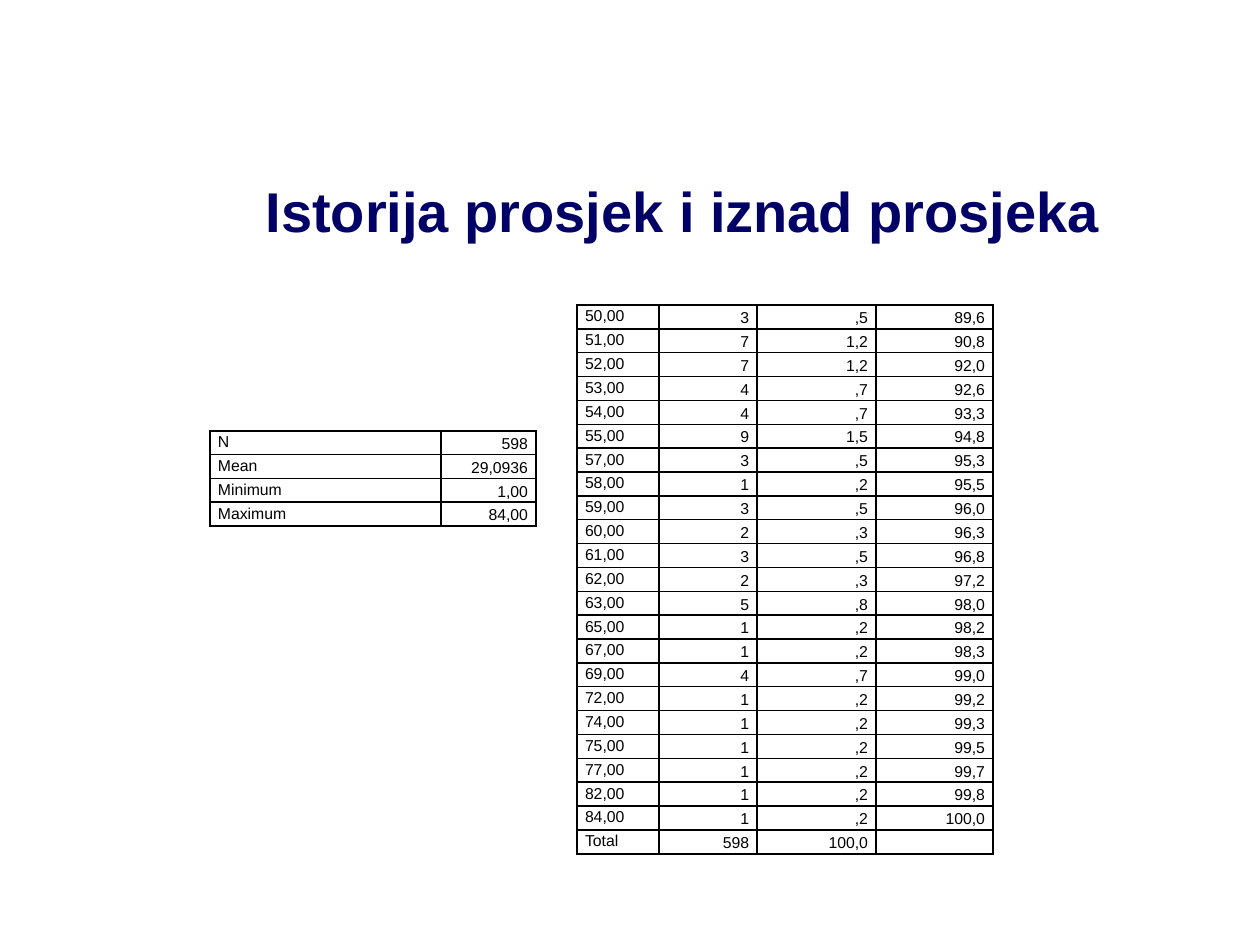
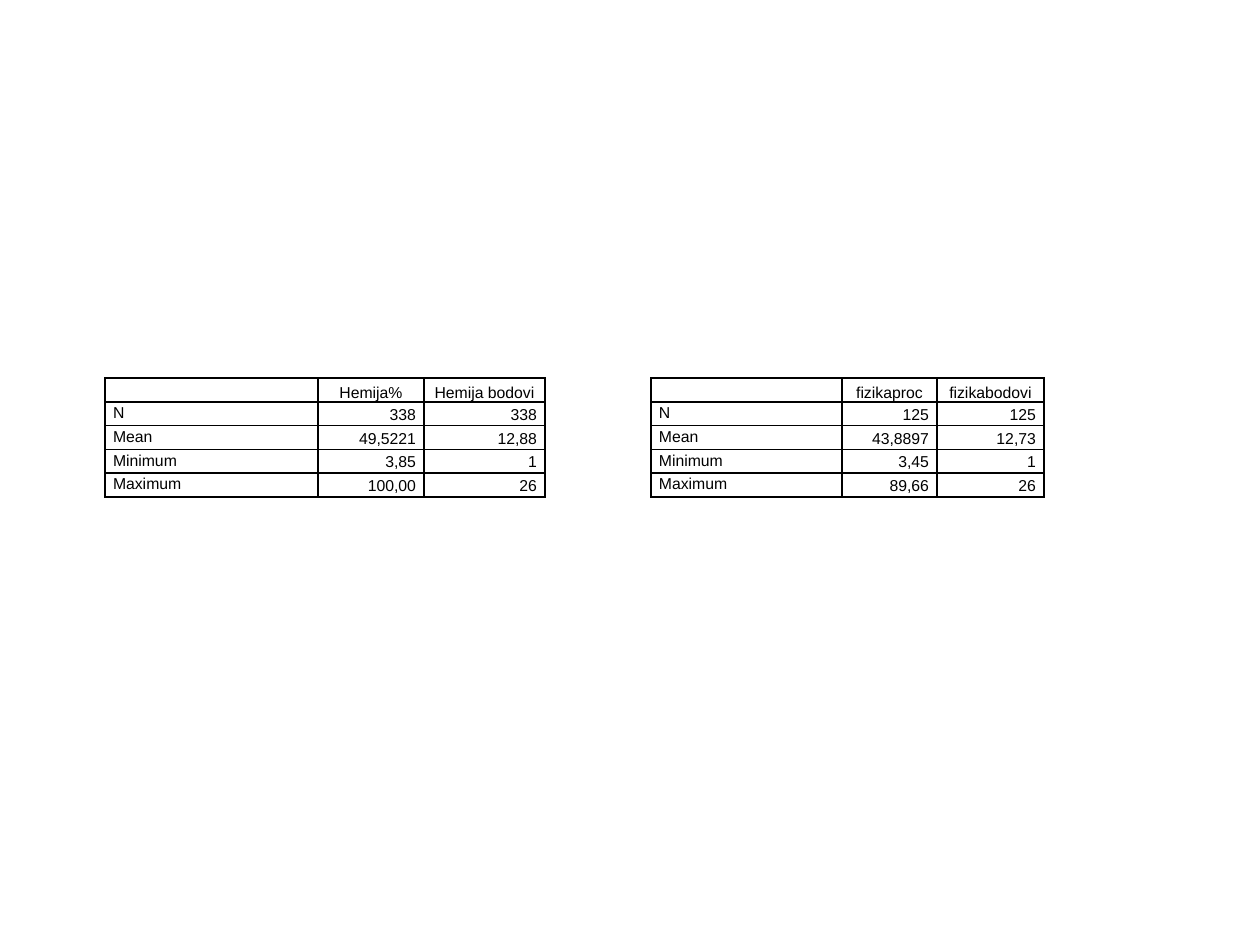
from dataclasses import dataclass

from lxml import etree
from pptx import Presentation
from pptx import util as u
from pptx.dml.color import RGBColor
from pptx.enum import text
from pptx.oxml.ns import qn

TITLE = "Istorija prosjek i iznad prosjeka"
TITLE_BOX = (253, 155, 944, 110)

FREQUENCIES = [
    ("50,00", "3", ",5", "89,6"),
    ("51,00", "7", "1,2", "90,8"),
    ("52,00", "7", "1,2", "92,0"),
    ("53,00", "4", ",7", "92,6"),
    ("54,00", "4", ",7", "93,3"),
    ("55,00", "9", "1,5", "94,8"),
    ("57,00", "3", ",5", "95,3"),
    ("58,00", "1", ",2", "95,5"),
    ("59,00", "3", ",5", "96,0"),
    ("60,00", "2", ",3", "96,3"),
    ("61,00", "3", ",5", "96,8"),
    ("62,00", "2", ",3", "97,2"),
    ("63,00", "5", ",8", "98,0"),
    ("65,00", "1", ",2", "98,2"),
    ("67,00", "1", ",2", "98,3"),
    ("69,00", "4", ",7", "99,0"),
    ("72,00", "1", ",2", "99,2"),
    ("74,00", "1", ",2", "99,3"),
    ("75,00", "1", ",2", "99,5"),
    ("77,00", "1", ",2", "99,7"),
    ("82,00", "1", ",2", "99,8"),
    ("84,00", "1", ",2", "100,0"),
    ("Total", "598", "100,0", ""),
]
STATISTICS = ("N", "Mean", "Minimum", "Maximum")
HISTORY = [("598",), ("29,0936",), ("1,00",), ("84,00",)]
PHYSICS = [("125", "125"), ("43,8897", "12,73"), ("3,45", "1"), ("89,66", "26")]
CHEMISTRY = [("338", "338"), ("49,5221", "12,88"), ("3,85", "1"), ("100,00", "26")]


@dataclass(frozen=True)
class Theme:
    font: str = "Arial"
    title_color: RGBColor = RGBColor.from_string("000066")
    text_color: RGBColor = RGBColor.from_string("000000")
    cell_color: RGBColor = RGBColor.from_string("FFFFFF")
    title_size: int = 32
    cell_size: int = 9
    line_spacing: float = 1.15
    border_width: int = 1


THEME = Theme()
SLIDE_SIZE = (1260, 945)
CELL_MARGIN = 8


def px(length):
    return u.Emu(round(length * u.Inches(1) / 126))


def add_run(paragraph, words, size, color, bold=False):
    run = paragraph.add_run()
    run.text = words
    run.font.name = THEME.font
    run.font.size = u.Pt(size)
    run.font.color.rgb = color
    run.font.bold = bold


def add_title(slide):
    title = slide.shapes.title
    title.left, title.top, title.width, title.height = map(px, TITLE_BOX)
    title.text_frame.vertical_anchor = text.MSO_ANCHOR.MIDDLE
    paragraph = title.text_frame.paragraphs[0]
    paragraph.alignment = text.PP_ALIGN.LEFT
    add_run(paragraph, TITLE, THEME.title_size, THEME.title_color, bold=True)


def add_borders(cell, open_sides):
    """Rule all four sides of a cell except the open ones."""
    properties = cell._tc.get_or_add_tcPr()
    for side in "LRTB":
        line = etree.SubElement(properties, qn(f"a:ln{side}"))
        if side in open_sides:
            etree.SubElement(line, qn("a:noFill"))
            continue
        line.set("w", str(u.Pt(THEME.border_width)))
        fill = etree.SubElement(line, qn("a:solidFill"))
        etree.SubElement(fill, qn("a:srgbClr"), val=str(THEME.text_color))


def fill_cell(cell, words, alignment, anchor, open_sides=""):
    add_borders(cell, open_sides)
    cell.fill.solid()
    cell.fill.fore_color.rgb = THEME.cell_color
    cell.margin_left = cell.margin_right = px(CELL_MARGIN)
    cell.margin_top = cell.margin_bottom = 0
    cell.vertical_anchor = anchor
    paragraph = cell.text_frame.paragraphs[0]
    paragraph.alignment = alignment
    paragraph.line_spacing = THEME.line_spacing
    if words:
        add_run(paragraph, words, THEME.cell_size, THEME.text_color)
    else:
        paragraph._p.get_or_add_endParaRPr().set("sz", str(THEME.cell_size * 100))


def add_grid(slide, box, widths, rows, header=False, wide_labels=False):
    """Add a ruled table; wide labels span two columns, except the N label."""
    left, top, height = box
    frame = slide.shapes.add_table(
        len(rows), len(widths), px(left), px(top), px(sum(widths)), px(height))
    table = frame.table
    table.first_row = table.horz_banding = False
    for column, width in zip(table.columns, widths):
        column.width = px(width)
    for row_index, values in enumerate(rows):
        table.rows[row_index].height = px(height / len(rows))
        split_label = wide_labels and values[0] == "N"
        if wide_labels and not split_label:
            table.cell(row_index, 0).merge(table.cell(row_index, 1))
        for column_index, words in enumerate(values):
            if column_index == 0:
                style = (text.PP_ALIGN.LEFT, text.MSO_ANCHOR.TOP)
            elif header and row_index == 0:
                style = (text.PP_ALIGN.CENTER, text.MSO_ANCHOR.BOTTOM)
            else:
                style = (text.PP_ALIGN.RIGHT, text.MSO_ANCHOR.MIDDLE)
            open_sides = {0: "R", 1: "L"}.get(column_index, "") if split_label else ""
            fill_cell(table.cell(row_index, column_index), words, *style, open_sides)


def add_statistics(slide, box, widths, results, headings=()):
    rows = [(label, "", *values) for label, values in zip(STATISTICS, results)]
    if headings:
        rows.insert(0, ("", "", *headings))
    add_grid(slide, box, widths, rows, header=bool(headings), wide_labels=True)


def main():
    presentation = Presentation()
    presentation.slide_width, presentation.slide_height = map(px, SLIDE_SIZE)
    title_only, blank = presentation.slide_layouts[5], presentation.slide_layouts[6]

    history = presentation.slides.add_slide(title_only)
    add_title(history)
    add_grid(history, (577, 305, 549), (82, 98, 119, 117), FREQUENCIES)
    add_statistics(history, (210, 431, 95), (174, 57, 95), HISTORY)

    sciences = presentation.slides.add_slide(blank)
    add_statistics(sciences, (651, 378, 119), (157, 34, 95, 107), PHYSICS,
                   ("fizikaproc", "fizikabodovi"))
    add_statistics(sciences, (105, 378, 119), (174, 39, 106, 121), CHEMISTRY,
                   ("Hemija%", "Hemija bodovi"))
    presentation.save("out.pptx")


if __name__ == "__main__":
    main()
